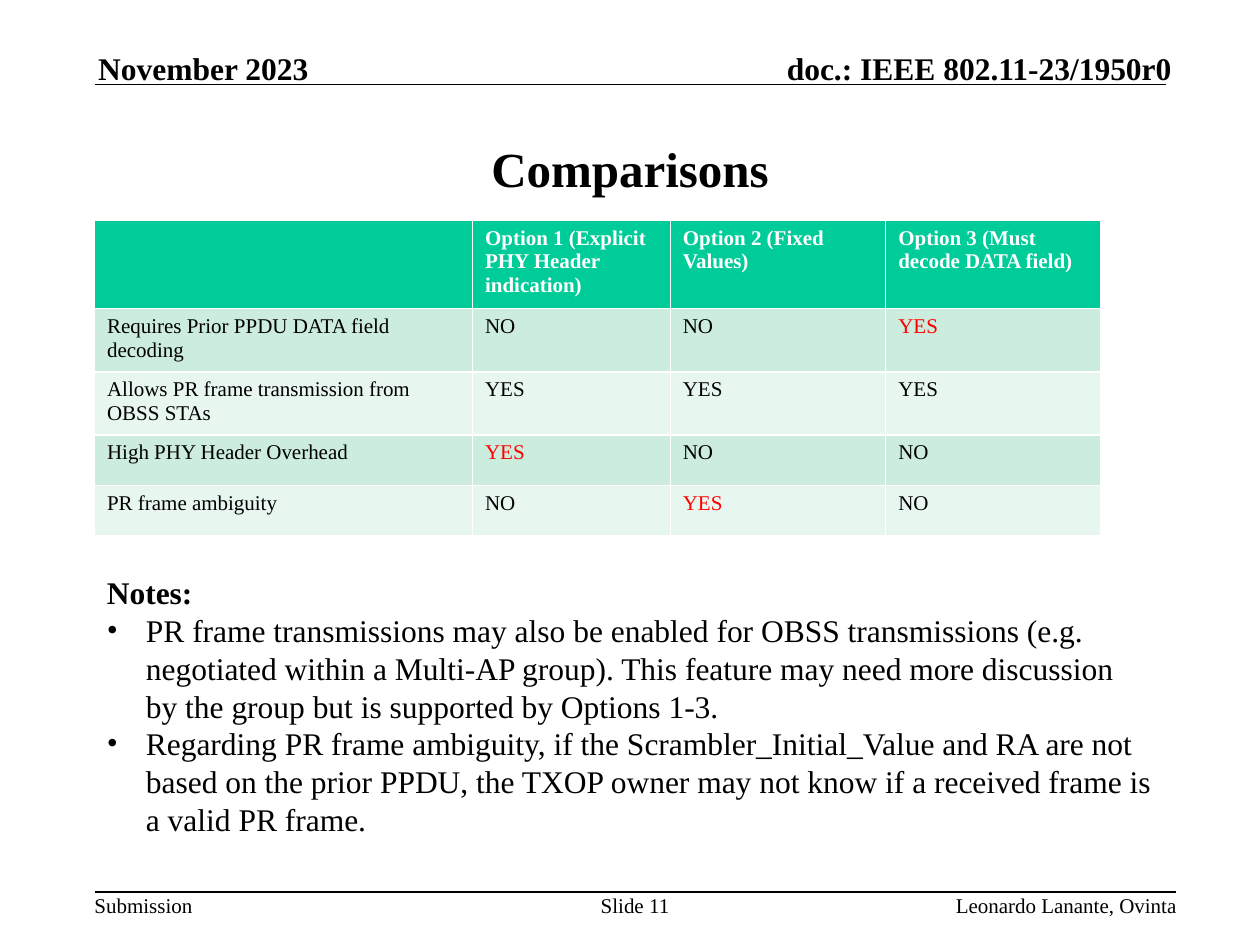
from lxml.etree import SubElement
from pptx import Presentation
from pptx.dml.color import RGBColor
from pptx.enum.shapes import MSO_CONNECTOR as Conn
from pptx.enum.text import MSO_ANCHOR as Anchor, PP_ALIGN as Align
from pptx.oxml.ns import qn
from pptx.util import Inches, Pt

W, H = 10, 7.5
LEFT = 0.075 * W
BODY_W = 0.85 * W
FOOT_Y = 7.08
BLACK, WHITE, RED = "000000", "FFFFFF", "FF0000"
HEAD_FILL, BAND_FILLS = "00CC99", ("CCECDE", "E7F6EF")

COLS = (3, 1.57, 1.71, 1.71)
ROWS = (0.65, 0.47, 0.47, 0.4, 0.4)
TABLE = (
    ("", "Option 1 (Explicit PHY Header indication)", "Option 2 (Fixed Values)",
     "Option 3 (Must decode DATA field)"),
    ("Requires Prior PPDU DATA field decoding", "NO", "NO", "YES"),
    ("Allows PR frame transmission from OBSS STAs", "YES", "YES", "YES"),
    ("High PHY Header Overhead", "YES", "NO", "NO"),
    ("PR frame ambiguity", "NO", "YES", "NO"),
)
DRAWBACKS = {(1, 3), (3, 1), (4, 2)}

NOTES = (
    "PR frame transmissions may also be enabled for OBSS transmissions (e.g. negotiated "
    "within a Multi-AP group). This feature may need more discussion by the group but is "
    "supported by Options 1-3.",
    "Regarding PR frame ambiguity, if the Scrambler_Initial_Value and RA are not based on "
    "the prior PPDU, the TXOP owner may not know if a received frame is a valid PR frame.",
)


def rgb(value):
    return RGBColor.from_string(value)


def set_all(obj, values):
    for name, value in values.items():
        setattr(obj, name, value)


def place(shape, x, y, w, h):
    set_all(shape, dict(left=Inches(x), top=Inches(y), width=Inches(w), height=Inches(h)))


def write(p, text, size, bold=False, color=BLACK, align=Align.LEFT):
    p.alignment = align
    r = p.add_run()
    r.text = text
    set_all(r.font, dict(name="Times New Roman", size=Pt(size), bold=bold))
    r.font.color.rgb = rgb(color)


def add_label(s, box, text, size, bold=False, align=Align.LEFT, anchor=Anchor.TOP):
    tf = s.shapes.add_textbox(*map(Inches, box)).text_frame
    set_all(tf, dict(word_wrap=True, vertical_anchor=anchor, margin_left=0,
                     margin_right=0, margin_top=0, margin_bottom=0))
    write(tf.paragraphs[0], text, size, bold, align=align)


def add_rule(s, y, right):
    line = s.shapes.add_connector(Conn.STRAIGHT, *map(Inches, (LEFT, y, right, y)))
    line.line.width = Pt(1)
    line.line.color.rgb = rgb(BLACK)
    SubElement(line._element.spPr, qn("a:effectLst"))


def add_title(s, text):
    title = s.shapes.title
    place(title, LEFT, 0.1 * H, BODY_W, 1.17)
    tf = title.text_frame
    tf.vertical_anchor = Anchor.MIDDLE
    write(tf.paragraphs[0], text, 28, True, align=Align.CENTER)


def add_comparison(s):
    frame = s.shapes.add_table(len(ROWS), len(COLS), Inches(LEFT), Inches(1.75),
                               Inches(sum(COLS)), Inches(sum(ROWS)))
    table = frame.table
    for col, width in zip(table.columns, COLS):
        col.width = Inches(width)
    for i, (row, height) in enumerate(zip(table.rows, ROWS)):
        row.height = Inches(height)
        head = i == 0
        for j, cell in enumerate(row.cells):
            cell.fill.solid()
            cell.fill.fore_color.rgb = rgb(HEAD_FILL if head else BAND_FILLS[(i - 1) % 2])
            color = WHITE if head else RED if (i, j) in DRAWBACKS else BLACK
            write(cell.text_frame.paragraphs[0], TABLE[i][j], 12, head, color)


def add_bullet(p):
    pPr = p._p.get_or_add_pPr()
    indent = Inches(0.31)
    pPr.set("marL", str(indent))
    pPr.set("indent", str(-indent))
    SubElement(pPr, qn("a:buFont"), typeface="Times New Roman")
    SubElement(pPr, qn("a:buChar"), char="•")


def add_notes_box(s):
    box = (LEFT, 0.6 * H, BODY_W, 2.22)
    tf = s.shapes.add_textbox(*map(Inches, box)).text_frame
    tf.word_wrap = True
    write(tf.paragraphs[0], "Notes:", 18, True)
    for text in NOTES:
        p = tf.add_paragraph()
        write(p, text, 18)
        add_bullet(p)


def main():
    prs = Presentation()
    set_all(prs, dict(slide_width=Inches(W), slide_height=Inches(H)))
    s = prs.slides.add_slide(prs.slide_layouts[5])
    add_rule(s, 0.67, 9.25)
    add_rule(s, FOOT_Y, 9.33)
    add_label(s, (0.78, 0.39, 2.6, 0.3), "November 2023", 18, True, anchor=Anchor.BOTTOM)
    add_label(s, (5.47, 0.39, 3.83, 0.3), "doc.: IEEE 802.11-23/1950r0", 18, True,
              Align.RIGHT, Anchor.BOTTOM)
    add_label(s, (LEFT, FOOT_Y, 0.8, 0.2), "Submission", 12)
    add_label(s, (4.7, FOOT_Y, 0.68, 0.2), "Slide 11", 12, align=Align.CENTER)
    add_label(s, (6.56, FOOT_Y, 2.78, 0.2), "Leonardo Lanante, Ovinta", 12, align=Align.RIGHT)
    add_title(s, "Comparisons")
    add_comparison(s)
    add_notes_box(s)
    prs.save("out.pptx")


if __name__ == "__main__":
    main()
